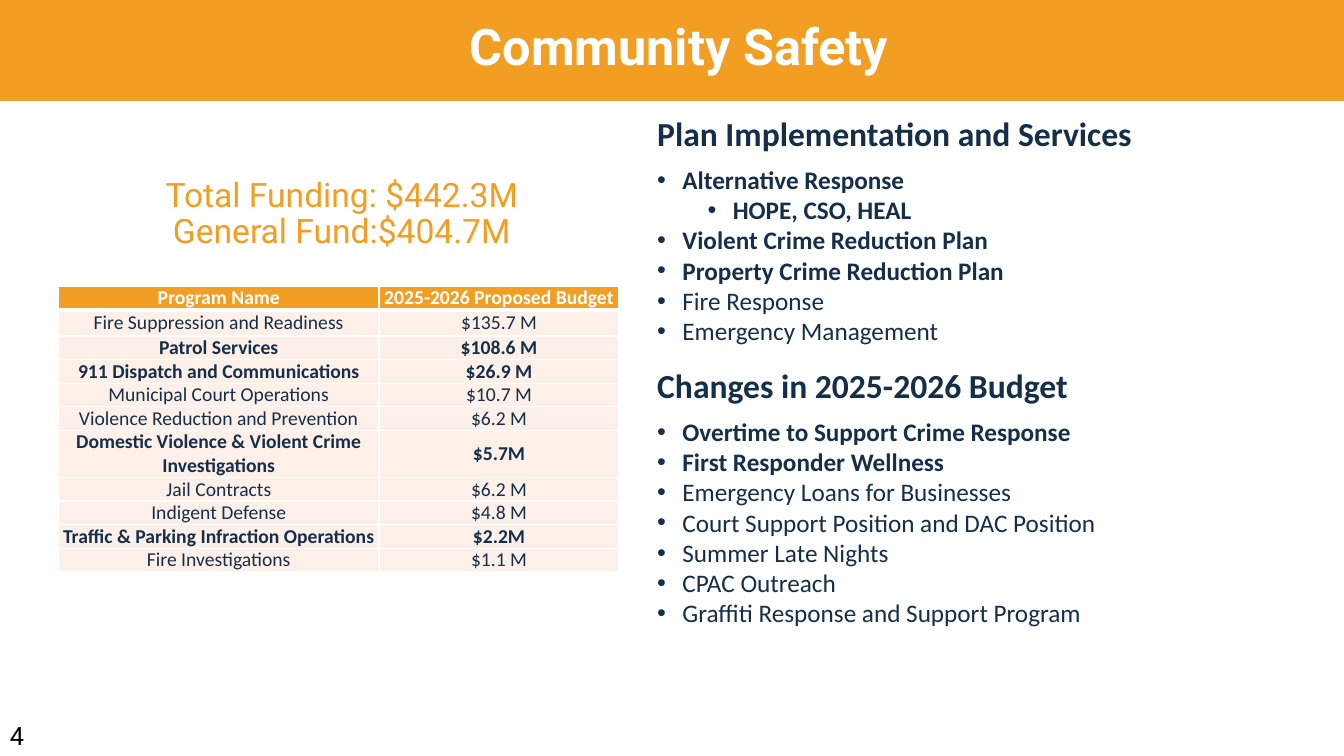
from dataclasses import dataclass

from lxml.etree import SubElement
from pptx import Presentation
from pptx.dml.color import RGBColor
from pptx.enum.shapes import MSO_SHAPE
from pptx.enum.text import MSO_ANCHOR as Anchor, PP_ALIGN as Align
from pptx.oxml.ns import qn
from pptx.util import Emu, Pt

EMU_PER_PX = 9144  # 100 px to the inch


@dataclass(frozen=True)
class Theme:
    orange: str = "F29E22"
    navy: str = "152E4A"
    blush: str = "FCF0E8"
    white: str = "FFFFFF"
    black: str = "000000"
    display: str = "Roboto"
    body: str = "Calibri"
    title_size: int = 36
    heading_size: int = 24
    list_size: int = 18
    table_size: int = 14


THEME = Theme()

PROGRAMS = [  # name, proposed budget, bold
    ("Fire Suppression and Readiness", "$135.7 M", False),
    ("Patrol Services", "$108.6 M", True),
    ("911 Dispatch and Communications", "$26.9 M", True),
    ("Municipal Court Operations", "$10.7 M", False),
    ("Violence Reduction and Prevention", "$6.2 M", False),
    ("Domestic Violence & Violent Crime Investigations", "$5.7M", True),
    ("Jail Contracts", "$6.2 M", False),
    ("Indigent Defense", "$4.8 M", False),
    ("Traffic & Parking Infraction Operations", "$2.2M", True),
    ("Fire Investigations", "$1.1 M", False),
]
SERVICES = [  # text, level, bold
    ("Alternative Response", 0, True),
    ("HOPE, CSO, HEAL", 1, True),
    ("Violent Crime Reduction Plan", 0, True),
    ("Property Crime Reduction Plan", 0, True),
    ("Fire Response", 0, False),
    ("Emergency Management", 0, False),
]
CHANGES = [
    ("Overtime to Support Crime Response", 0, True),
    ("First Responder Wellness", 0, True),
    ("Emergency Loans for Businesses", 0, False),
    ("Court Support Position and DAC Position", 0, False),
    ("Summer Late Nights", 0, False),
    ("CPAC Outreach", 0, False),
    ("Graffiti Response and Support Program", 0, False),
]


def px(length):
    return Emu(length * EMU_PER_PX)


def style(para, size, color, face=THEME.body, bold=False, align=Align.LEFT):
    para.alignment = align
    for span in para.runs:
        span.font.size, span.font.name, span.font.bold = Pt(size), face, bold
        span.font.color.rgb = RGBColor.from_string(color)


def paint(fill, color):
    fill.solid()
    fill.fore_color.rgb = RGBColor.from_string(color)


def add_text(page, box, anchor=Anchor.TOP):
    frame = page.shapes.add_textbox(*map(px, box)).text_frame
    frame.word_wrap = True
    frame.vertical_anchor = anchor
    return frame


def add_banner(page, box, title):
    banner = page.shapes.add_shape(MSO_SHAPE.RECTANGLE, *map(px, box))
    banner.shadow.inherit = False
    paint(banner.fill, THEME.orange)
    banner.line.fill.background()
    frame = banner.text_frame
    frame.text = title
    frame.vertical_anchor = Anchor.MIDDLE
    style(frame.paragraphs[0], THEME.title_size, THEME.white, THEME.display, True, Align.CENTER)


def add_funding(page, box, lines):
    para = add_text(page, box, Anchor.MIDDLE).paragraphs[0]
    para.text = "\v".join(lines)
    para.line_spacing = 0.9
    style(para, THEME.heading_size, THEME.orange, THEME.display, align=Align.CENTER)


def add_page_number(page, box, number):
    frame = add_text(page, box, Anchor.MIDDLE)
    frame.text = str(number)
    style(frame.paragraphs[0], THEME.list_size, THEME.black, THEME.display)


def add_bullet(para, level):
    para.level = level
    properties = para._p.get_or_add_pPr()
    properties.set("marL", str(px(25 + 50 * level)))
    properties.set("indent", str(px(-25)))
    SubElement(properties, qn("a:buFont"), typeface="Arial")
    SubElement(properties, qn("a:buChar"), char="•")


def add_section(page, box, heading, items):
    """Place a heading in the top 90 px of the box and a bulleted list below."""
    left, top, width, height = box
    title = add_text(page, (left, top, width, 90), Anchor.BOTTOM).paragraphs[0]
    title.text = heading
    title.line_spacing = 0.9
    style(title, THEME.heading_size, THEME.navy, bold=True)

    frame = add_text(page, (left, top + 91, width, height - 91))
    frame.text = "\n".join(text for text, _, _ in items)
    for para, (_, level, bold) in zip(frame.paragraphs, items):
        add_bullet(para, level)
        style(para, THEME.list_size, THEME.navy, bold=bold)


def add_borders(cell, bottom=1):
    properties = cell._tc.get_or_add_tcPr()
    for side, points in (("L", 1), ("R", 1), ("T", 1), ("B", bottom)):
        line = SubElement(properties, qn(f"a:ln{side}"), w=str(Pt(points)))
        SubElement(SubElement(line, qn("a:solidFill")), qn("a:srgbClr"), val=THEME.white)


def fill_cell(cell, text, bold, is_header):
    add_borders(cell, bottom=3 if is_header else 1)
    paint(cell.fill, THEME.orange if is_header else THEME.blush)
    cell.margin_left = cell.margin_right = cell.margin_top = cell.margin_bottom = 0
    cell.vertical_anchor = Anchor.TOP if is_header else Anchor.MIDDLE
    cell.text = text
    color = THEME.white if is_header else THEME.navy
    style(cell.text_frame.paragraphs[0], THEME.table_size, color, bold=bold, align=Align.CENTER)


def add_budget_table(page, box, programs):
    rows = [("Program Name", "2025-2026 Proposed Budget", True), *programs]
    table = page.shapes.add_table(len(rows), 2, *map(px, box)).table
    table.horz_banding = False
    name_width = 318
    table.columns[0].width = px(name_width)
    table.columns[1].width = px(box[2] - name_width)
    for index, (name, budget, bold) in enumerate(rows):
        table.rows[index].height = px(26 if index == 1 else 20)
        for column, text in enumerate((name, budget)):
            fill_cell(table.cell(index, column), text, bold, is_header=index == 0)


def build_community_safety(page):
    add_page_number(page, (0, 710, 300, 40), 4)
    add_banner(page, (-19, -11, 1385, 111), "Community Safety")
    add_funding(page, (-236, 196, 1150, 34),
                ["Total Funding: $442.3M", "General Fund:$404.7M"])
    add_section(page, (642, 67, 556, 493), "Plan Implementation and Services", SERVICES)
    add_section(page, (642, 317, 556, 493), "Changes in 2025-2026 Budget", CHANGES)
    add_budget_table(page, (58, 284, 556, 282), PROGRAMS)


def main():
    deck = Presentation()
    deck.slide_width, deck.slide_height = px(1333), px(750)
    build_community_safety(deck.slides.add_slide(deck.slide_layouts[6]))
    deck.save("out.pptx")


if __name__ == "__main__":
    main()
